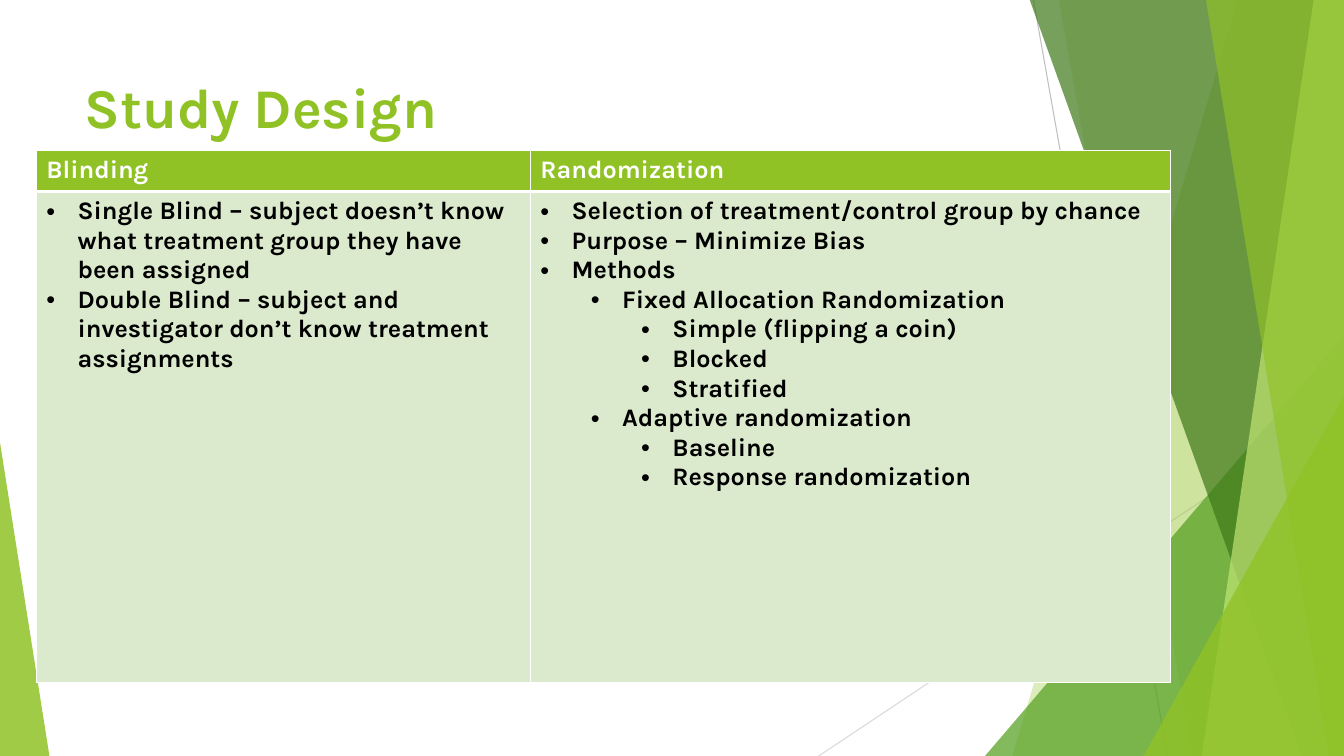
import dataclasses

import lxml.etree
import pptx
import pptx.dml.color
import pptx.enum.shapes
import pptx.enum.text
import pptx.oxml.ns
import pptx.util

Inches = pptx.util.Inches
Pt = pptx.util.Pt
qn = pptx.oxml.ns.qn


@dataclasses.dataclass(frozen=True)
class Theme:
    font: str = "Karla"
    title_size: int = 40
    body_size: int = 18
    green: str = "90C226"
    leaf: str = "54A021"
    forest: str = "3F7819"
    lime: str = "C0E474"
    pale: str = "DBE9CD"
    white: str = "FFFFFF"
    black: str = "000000"
    steep_line: str = "BFBFBF"
    shallow_line: str = "D9D9D9"


THEME = Theme()
TOP, RIGHT, BOTTOM = -0.01, 13.33, 7.5

BLINDING = [
    (0, "Single Blind – subject doesn’t know what treatment group they have been assigned"),
    (0, "Double Blind – subject and investigator don’t know treatment assignments"),
]
RANDOMIZATION = [
    (0, "Selection of treatment/control group by chance"),
    (0, "Purpose – Minimize Bias"),
    (0, "Methods"),
    (1, "Fixed Allocation Randomization"),
    (2, "Simple (flipping a coin)"),
    (2, "Blocked"),
    (2, "Stratified"),
    (1, "Adaptive randomization"),
    (2, "Baseline"),
    (2, "Response randomization"),
]


def rgb(color):
    return pptx.dml.color.RGBColor.from_string(color)


def paint(shape, color, opacity):
    shape.shadow.inherit = False
    shape.line.fill.background()
    shape.fill.solid()
    shape.fill.fore_color.rgb = rgb(color)
    tint = shape.fill._xPr.find(".//" + qn("a:srgbClr"))
    lxml.etree.SubElement(tint, qn("a:alpha"), val=str(opacity * 1000))


def add_ray(slide, start, end, color):
    ray = slide.shapes.add_connector(
        pptx.enum.shapes.MSO_CONNECTOR.STRAIGHT, *map(Inches, start + end))
    ray.line.color.rgb = rgb(color)
    ray.line.width = Pt(0.75)
    lxml.etree.SubElement(ray._element.spPr, qn("a:effectLst"))


def add_band(slide, top_left, bottom_left, color, opacity):
    corners = [(top_left, TOP), (RIGHT, TOP), (RIGHT, BOTTOM), (bottom_left, BOTTOM)]
    points = [(Inches(x), Inches(y)) for x, y in corners]
    outline = slide.shapes.build_freeform(*points[0])
    outline.add_line_segments(points[1:], close=True)
    paint(outline.convert_to_shape(), color, opacity)


def add_wedge(slide, left, top, width, apex, color, opacity):
    wedge = slide.shapes.add_shape(
        pptx.enum.shapes.MSO_SHAPE.ISOSCELES_TRIANGLE,
        Inches(left), Inches(top), Inches(width), Inches(BOTTOM - top))
    wedge.adjustments[0] = apex
    paint(wedge, color, opacity)


def add_text(paragraph, text, size, color):
    run = paragraph.add_run()
    run.text = text
    run.font.name = THEME.font
    run.font.size = Pt(size)
    run.font.bold = True
    run.font.color.rgb = rgb(color)


def add_title(slide, text):
    title = slide.shapes.add_textbox(Inches(0.74), Inches(0.67), Inches(9.4), Inches(1.44))
    title.text_frame.word_wrap = True
    title.text_frame.vertical_anchor = pptx.enum.text.MSO_ANCHOR.TOP
    add_text(title.text_frame.paragraphs[0], text, THEME.title_size, THEME.green)


def style_cell(cell, color, top, bottom):
    cell.fill.solid()
    cell.fill.fore_color.rgb = rgb(color)
    borders = [("a:lnL", 1), ("a:lnR", 1), ("a:lnT", top), ("a:lnB", bottom)]
    properties = cell._tc.get_or_add_tcPr()
    for position, (side, width) in enumerate(borders):
        border = lxml.etree.Element(qn(side), w=str(Pt(width)))
        fill = lxml.etree.SubElement(border, qn("a:solidFill"))
        lxml.etree.SubElement(fill, qn("a:srgbClr"), val=THEME.white)
        properties.insert(position, border)


def add_bullets(cell, items):
    frame = cell.text_frame
    for index, (level, text) in enumerate(items):
        paragraph = frame.add_paragraph() if index else frame.paragraphs[0]
        paragraph.level = level
        properties = paragraph._p.get_or_add_pPr()
        properties.set("marL", str(Inches(0.31 + 0.5 * level)))
        properties.set("indent", str(Inches(-0.31)))
        lxml.etree.SubElement(properties, qn("a:buFont"), typeface="Arial")
        lxml.etree.SubElement(properties, qn("a:buChar"), char="•")
        add_text(paragraph, text, THEME.body_size, THEME.black)


def add_design_table(slide, columns):
    widths, heights = [4.9, 6.35], [0.41, 4.87]
    table = slide.shapes.add_table(
        2, len(columns), Inches(0.36), Inches(1.49),
        Inches(sum(widths)), Inches(sum(heights))).table
    for row, height in zip(table.rows, heights):
        row.height = Inches(height)
    for index, (heading, items) in enumerate(columns):
        table.columns[index].width = Inches(widths[index])
        header, body = table.cell(0, index), table.cell(1, index)
        style_cell(header, THEME.green, 1, 3)
        style_cell(body, THEME.pale, 3, 1)
        add_text(header.text_frame.paragraphs[0], heading, THEME.body_size, THEME.white)
        add_bullets(body, items)


def add_backdrop(slide):
    add_ray(slide, (10.25, 0), (11.58, BOTTOM), THEME.steep_line)
    add_ray(slide, (RIGHT, 4.03), (8.12, BOTTOM), THEME.shallow_line)
    add_band(slide, 12.28, 10.04, THEME.green, 30)
    add_band(slide, 10.5, 11.83, THEME.green, 20)
    add_wedge(slide, 9.77, 3.33, 3.56, 1, THEME.leaf, 72)
    add_band(slide, 10.21, 12.91, THEME.forest, 70)
    add_band(slide, 13.03, 11.92, THEME.lime, 70)
    add_band(slide, 11.96, 13.18, THEME.green, 65)
    add_wedge(slide, 11.34, 3.93, 1.99, 1, THEME.green, 80)
    add_wedge(slide, 0, 4.39, 0.49, 0, THEME.green, 85)


def main():
    deck = pptx.Presentation()
    deck.slide_width, deck.slide_height = Inches(RIGHT), Inches(BOTTOM)
    slide = deck.slides.add_slide(deck.slide_layouts[6])
    add_backdrop(slide)
    add_title(slide, "Study Design")
    add_design_table(slide, [("Blinding", BLINDING), ("Randomization", RANDOMIZATION)])
    deck.save("out.pptx")


if __name__ == "__main__":
    main()
